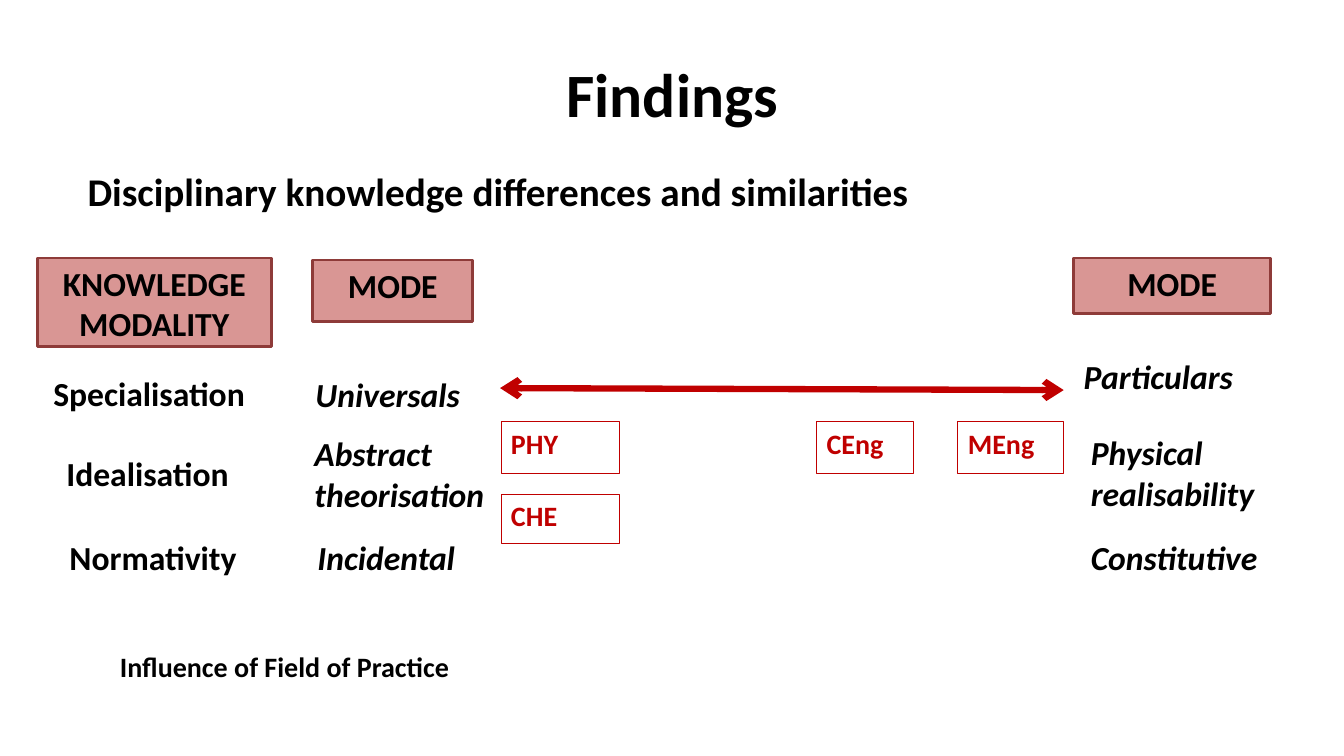
import lxml.etree
import pptx
import pptx.dml.color
import pptx.enum.shapes
import pptx.enum.text
import pptx.oxml.ns
import pptx.util

Inches = pptx.util.Inches
BLACK, RED, PINK, BROWN = "000000", "C00000", "D99694", "8E3B39"


def color(value):
    return pptx.dml.color.RGBColor.from_string(value)


def write(shape, text, size, ink=BLACK, italic=False, centered=False, anchor="TOP"):
    frame = shape.text_frame
    frame.text = text
    frame.word_wrap = True
    frame.vertical_anchor = getattr(pptx.enum.text.MSO_ANCHOR, anchor)
    paragraph = frame.paragraphs[0]
    alignment = pptx.enum.text.PP_ALIGN
    paragraph.alignment = alignment.CENTER if centered else alignment.LEFT
    font = paragraph.runs[0].font
    font.name = "Calibri"
    font.size = pptx.util.Pt(size)
    font.bold = True
    font.italic = italic
    font.color.rgb = color(ink)


def add_label(shapes, box, text, size, italic=False):
    label = shapes.add_textbox(*map(Inches, box))
    write(label, text, size, italic=italic)


def add_box(shapes, box, text, size, ink, fill, line, width, centered):
    rectangle = shapes.add_shape(pptx.enum.shapes.MSO_SHAPE.RECTANGLE, *map(Inches, box))
    rectangle.shadow.inherit = False
    if fill:
        rectangle.fill.solid()
        rectangle.fill.fore_color.rgb = color(fill)
    else:
        rectangle.fill.background()
    rectangle.line.color.rgb = color(line)
    rectangle.line.width = pptx.util.Pt(width)
    write(rectangle, text, size, ink, centered=centered)


def add_title(slide, box, text):
    title = slide.shapes.title
    title.left, title.top, title.width, title.height = map(Inches, box)
    write(title, text, 44, centered=True, anchor="MIDDLE")


def add_column(slide, box, heading, entries, italic):
    left, top, width, height = box
    shapes = slide.shapes.add_group_shape().shapes
    add_box(shapes, box, heading, 24, BLACK, PINK, BROWN, 2, True)
    for text, across, down, entry_width, entry_height in entries:
        entry_box = (left + across, top + down, entry_width, entry_height)
        add_label(shapes, entry_box, text, 24, italic)


def add_disciplines(slide, left, top, disciplines):
    for text, across, down, width, height in disciplines:
        box = (left + across, top + down, width, height)
        add_box(slide.shapes, box, text, 20, RED, None, RED, 0.5, False)


def add_spectrum(slide, left, top, width, drop):
    ends = map(Inches, (left, top, left + width, top + drop))
    arrow = slide.shapes.add_connector(pptx.enum.shapes.MSO_CONNECTOR.STRAIGHT, *ends)
    arrow.line.color.rgb = color(RED)
    arrow.line.width = pptx.util.Pt(4.5)
    line = arrow.line._get_or_add_ln()
    for end in ("a:headEnd", "a:tailEnd"):
        lxml.etree.SubElement(line, pptx.oxml.ns.qn(end), type="arrow")
    lxml.etree.SubElement(arrow._element.spPr, pptx.oxml.ns.qn("a:effectLst"))


def main():
    presentation = pptx.Presentation()
    presentation.slide_width = Inches(13.33)
    presentation.slide_height = Inches(7.5)
    slide = presentation.slides.add_slide(presentation.slide_layouts[5])

    add_title(slide, (0.67, 0.3, 12, 1.25), "Findings")
    add_label(slide.shapes, (0.77, 1.61, 8.52, 0.57),
              "Disciplinary knowledge differences and similarities", 28)
    add_column(slide, (0.37, 2.56, 2.32, 0.88), "KNOWLEDGE MODALITY", [
        ("Specialisation", 0.06, 1.09, 2.32, 0.56),
        ("Idealisation", 0.19, 1.88, 2.1, 0.58),
        ("Normativity", 0.22, 2.72, 2.1, 0.52),
    ], False)
    add_column(slide, (3.1, 2.58, 1.59, 0.61), "MODE", [
        ("Universals", -0.07, 1.08, 1.64, 0.7),
        ("Abstract theorisation", -0.08, 1.67, 2.01, 0.91),
        ("Incidental", -0.05, 2.7, 1.64, 0.52),
    ], True)
    add_column(slide, (10.65, 2.56, 1.95, 0.55), "MODE", [
        ("Particulars", 0, 0.92, 2.08, 0.5),
        ("Physical realisability", 0.07, 1.68, 2.08, 0.91),
        ("Constitutive", 0.07, 2.72, 2.41, 0.37),
    ], True)
    add_disciplines(slide, 4.97, 4.18, [
        ("PHY", 0, 0, 1.17, 0.52),
        ("CHE", 0, 0.72, 1.17, 0.49),
        ("CEng", 3.13, 0, 0.96, 0.52),
        ("MEng", 4.53, 0, 1.05, 0.52),
    ])
    add_label(slide.shapes, (1.09, 6.39, 3.81, 0.44), "Influence of Field of Practice", 20)
    add_spectrum(slide, 4.96, 3.85, 5.59, 0.02)
    presentation.save("out.pptx")


if __name__ == "__main__":
    main()
